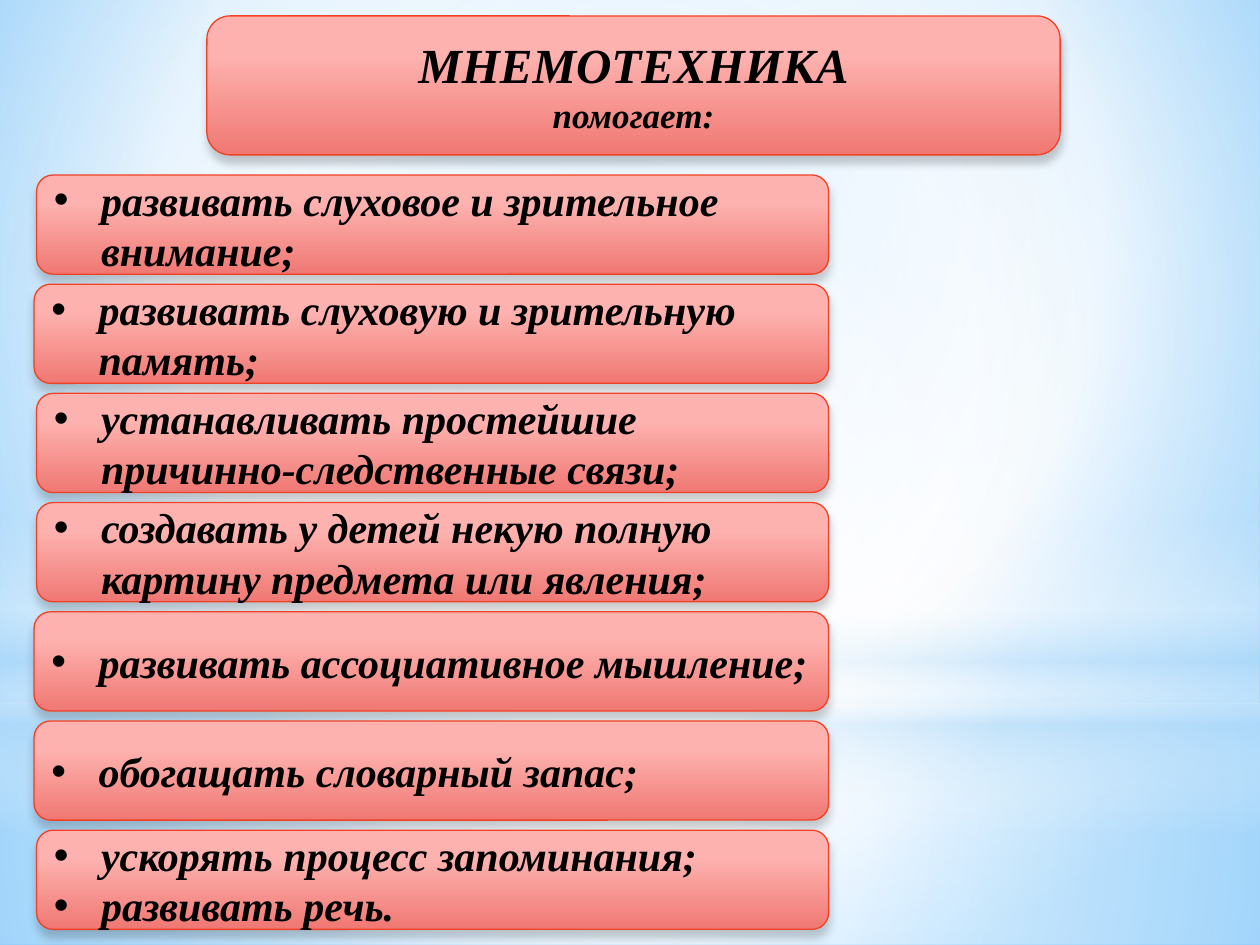
from pptx import Presentation, oxml, util as u
from pptx.dml.color import RGBColor
from pptx.enum import shapes, text
from pptx.oxml import ns

Pt = u.Pt
KIND = shapes.MSO_SHAPE
ALIGN = text.PP_ALIGN
FONT = "Times New Roman"
WIDE, HIGH = 720, 540
MID = (50, 50, 50, 50)
PINK = [(28, "FDB2AF", 100), (100, "F07873", 100)]
ROWS = [
    (20.9, ["развивать слуховое и зрительное внимание;"]),
    (19.5, ["развивать слуховую и зрительную память;"]),
    (20.9, ["устанавливать простейшие причинно-следственные связи;"]),
    (20.9, ["создавать у детей некую полную картину предмета или явления;"]),
    (19.5, ["развивать ассоциативное мышление;"]),
    (19.5, ["обогащать словарный запас;"]),
    (20.9, ["ускорять процесс запоминания;", "развивать речь."]),
]


def color(code):
    """Turn a hex string into a colour."""
    return RGBColor.from_string(code)


def blend(fill, props, stops, focus=None):
    """Fill with a gradient: round about a focus, else from top to bottom."""
    fill.solid()
    marks = "".join(
        f'<a:gs pos="{pos * 1000}"><a:srgbClr val="{code}">'
        f'<a:alpha val="{alpha * 1000}"/></a:srgbClr></a:gs>'
        for pos, code, alpha in stops)
    if focus:
        left, top, right, low = (side * 1000 for side in focus)
        way = (f'<a:path path="circle"><a:fillToRect l="{left}" t="{top}" '
               f'r="{right}" b="{low}"/></a:path>')
    else:
        way = '<a:lin ang="5400000" scaled="0"/>'
    grad = oxml.parse_xml(
        f'<a:gradFill {ns.nsdecls("a")} rotWithShape="1">'
        f'<a:gsLst>{marks}</a:gsLst>{way}</a:gradFill>')
    props.replace(props.find(ns.qn("a:solidFill")), grad)


def shape(slide, kind, box, stops, focus=None):
    """Add a shape with a gradient and no line or shadow."""
    item = slide.shapes.add_shape(kind, *map(Pt, box))
    item.shadow.inherit = False
    item.line.fill.background()
    blend(item.fill, item._element.spPr, stops, focus)
    return item


def card(slide, box):
    """Add a pink rounded card with a red edge and a soft shadow."""
    item = shape(slide, KIND.ROUNDED_RECTANGLE, box, PINK)
    item.line.color.rgb = color("F14124")
    item.line.width = Pt(0.75)
    item._element.spPr.find(ns.qn("a:effectLst")).append(oxml.parse_xml(
        f'<a:outerShdw {ns.nsdecls("a")} blurRad="{Pt(5)}" dist="{Pt(4)}" '
        'dir="5400000" rotWithShape="0"><a:srgbClr val="000000">'
        '<a:alpha val="20000"/></a:srgbClr></a:outerShdw>'))
    frame = item.text_frame
    frame.word_wrap = True
    frame.vertical_anchor = text.MSO_ANCHOR.MIDDLE
    return frame


def write(para, words, size=24, align=ALIGN.LEFT, bullet=False):
    """Write bold italic words in a paragraph, with a bullet if asked."""
    para.alignment = align
    run = para.add_run()
    run.text = words
    font = run.font
    font.name, font.size = FONT, Pt(size)
    font.bold = font.italic = True
    font.color.rgb = color("000000")
    if bullet:
        props = para._p.get_or_add_pPr()
        props.set("marL", str(Pt(27)))
        props.set("indent", str(-Pt(27)))
        for tag in ('buFont typeface="Arial"', 'buChar char="•"'):
            props.append(oxml.parse_xml(f'<a:{tag} {ns.nsdecls("a")}/>'))


def sky(slide):
    """Paint the blue background and its veils of light."""
    ground = slide.background.fill
    ground.solid()
    blend(ground, slide._element.xpath("p:cSld/p:bg/p:bgPr")[0],
          [(0, "9ED5FF", 100), (60, "FFFFFF", 100), (100, "5BB9FF", 100)],
          (20, 10, 20, 60))
    edge = 401.8
    shape(slide, KIND.RECTANGLE, (0, edge, WIDE, HIGH - edge),
          [(0, "FFFFFF", 91), (37, "FFFFFF", 76), (100, "B4DCFA", 79)], MID)
    shape(slide, KIND.RECTANGLE, (0, 0, WIDE, edge),
          [(0, "FFFFFF", 89), (48, "FFFFFF", 62), (100, "B4DCFA", 79)], MID)
    shape(slide, KIND.RECTANGLE, (0, 296.6, WIDE, 180),
          [(0, "FFFFFF", 0), (29, "FFFFFF", 30), (45, "B4DCFA", 40),
           (55, "FFFFFF", 26), (65, "B4DCFA", 60), (100, "FFFFFF", 0)])
    shape(slide, KIND.OVAL, (0, 126, WIDE, edge),
          [(0, "FFFFFF", 100), (56, "FFFFFF", 0)], MID)


def title(slide):
    """Add the heading card."""
    frame = card(slide, (118.2, 9.1, 487.6, 79.4))
    write(frame.paragraphs[0], "МНЕМОТЕХНИКА", size=28, align=ALIGN.CENTER)
    write(frame.add_paragraph(), "помогает:", size=20, align=ALIGN.CENTER)


def goals(slide):
    """Stack the cards of goals at an even step."""
    for row, (left, lines) in enumerate(ROWS):
        frame = card(slide, (left, 100 + 62.4 * row, 473.5 - left, 56.7))
        for spot, words in enumerate(lines):
            para = frame.add_paragraph() if spot else frame.paragraphs[0]
            write(para, words, bullet=True)


def main():
    """Build the slide and save it."""
    deck = Presentation()
    deck.slide_width, deck.slide_height = Pt(WIDE), Pt(HIGH)
    slide = deck.slides.add_slide(deck.slide_layouts[6])
    sky(slide)
    title(slide)
    goals(slide)
    deck.save("out.pptx")


if __name__ == "__main__":
    main()
